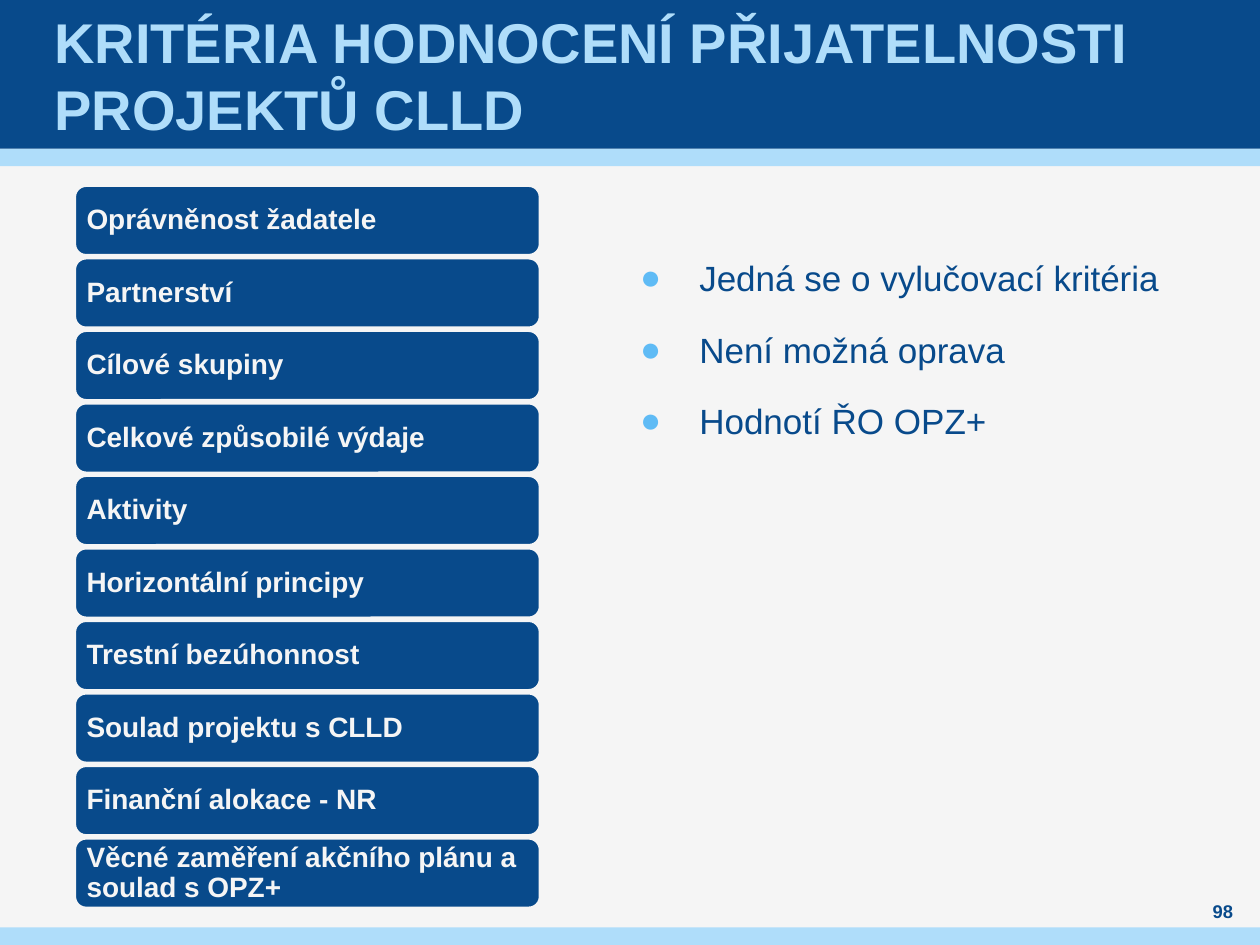
import dataclasses

import pptx
import pptx.dml.color
import pptx.enum.shapes
import pptx.enum.text
import pptx.oxml
import pptx.oxml.ns
import pptx.util

Inches = pptx.util.Inches
Pt = pptx.util.Pt
RGBColor = pptx.dml.color.RGBColor
MSO_SHAPE = pptx.enum.shapes.MSO_SHAPE
MSO_ANCHOR = pptx.enum.text.MSO_ANCHOR
PP_ALIGN = pptx.enum.text.PP_ALIGN

NAVY = RGBColor(0x08, 0x4A, 0x8B)
PALE_BLUE = RGBColor(0xAF, 0xDD, 0xFA)
BULLET_BLUE = RGBColor(0x5F, 0xBB, 0xF5)
OFF_WHITE = RGBColor(0xF5, 0xF5, 0xF5)
FONT = "Arial"


@dataclasses.dataclass(frozen=True)
class Box:
    left: float
    top: float
    width: float
    height: float

    def emu(self) -> tuple:
        return tuple(Inches(v) for v in dataclasses.astuple(self))


BANDS = [
    (Box(0, 1.18, 10, 0.14), PALE_BLUE),
    (Box(0, 0, 10, 1.18), NAVY),
    (Box(0, 7.36, 10, 0.14), PALE_BLUE),
]
CRITERIA = [
    "Oprávněnost žadatele",
    "Partnerství",
    "Cílové skupiny",
    "Celkové způsobilé výdaje",
    "Aktivity",
    "Horizontální principy",
    "Trestní bezúhonnost",
    "Soulad projektu s CLLD",
    "Finanční alokace - NR",
    "Věcné zaměření akčního plánu a soulad s OPZ+",
]
FIRST_TOP, LAST_TOP = 1.47, 6.65
NOTES = ["Jedná se o vylučovací kritéria", "Není možná oprava", "Hodnotí ŘO OPZ+"]


def write(sp, *lines: str, size: float, color: RGBColor, bold: bool = False,
          align=PP_ALIGN.LEFT, anchor=MSO_ANCHOR.MIDDLE, inset: tuple = (0, 0),
          line_spacing=None, space: float = 0) -> None:
    """Fill a shape with one paragraph per line; inset is (sides, top and bottom)."""
    tf = sp.text_frame
    tf.word_wrap = True
    tf.vertical_anchor = anchor
    tf.margin_left = tf.margin_right = Inches(inset[0])
    tf.margin_top = tf.margin_bottom = Inches(inset[1])
    for i, line in enumerate(lines):
        p = tf.add_paragraph() if i else tf.paragraphs[0]
        p.alignment = align
        p.line_spacing = line_spacing
        p.space_before = p.space_after = Pt(space)
        r = p.add_run()
        r.text = line
        r.font.name = FONT
        r.font.size = Pt(size)
        r.font.bold = bold
        r.font.color.rgb = color


def add_block(s, kind, box: Box, fill: RGBColor):
    sp = s.shapes.add_shape(kind, *box.emu())
    sp.shadow.inherit = False
    sp.fill.solid()
    sp.fill.fore_color.rgb = fill
    sp.line.fill.background()
    return sp


def add_bullet(p, char: str, color: RGBColor, indent: float) -> None:
    pPr = p._p.get_or_add_pPr()
    pPr.set("marL", str(Inches(indent)))
    pPr.set("indent", str(-Inches(indent)))
    ns = pptx.oxml.ns.nsdecls("a")
    for xml in (f'<a:buClr {ns}><a:srgbClr val="{color}"/></a:buClr>',
                f'<a:buFont {ns} typeface="{FONT}"/>',
                f'<a:buChar {ns} char="{char}"/>'):
        pPr.append(pptx.oxml.parse_xml(xml))


def main() -> None:
    prs = pptx.Presentation()
    prs.slide_width, prs.slide_height = Inches(10), Inches(7.5)
    s = prs.slides.add_slide(prs.slide_layouts[6])
    s.background.fill.solid()
    s.background.fill.fore_color.rgb = OFF_WHITE

    # Header and footer bands
    for box, fill in BANDS:
        add_block(s, MSO_SHAPE.RECTANGLE, box, fill)

    # Title
    title = s.shapes.add_textbox(*Box(0.39, 0, 9.21, 1.18).emu())
    write(title, "KRITÉRIA HODNOCENÍ PŘIJATELNOSTI PROJEKTŮ CLLD",
          size=32, color=PALE_BLUE, bold=True, inset=(0.04, 0))

    # Bulleted notes
    notes = s.shapes.add_textbox(*Box(5.08, 1.97, 4.33, 4.72).emu())
    write(notes, *NOTES, size=20, color=NAVY, anchor=MSO_ANCHOR.TOP,
          line_spacing=Pt(28.8), space=6)
    for p in notes.text_frame.paragraphs:
        add_bullet(p, "●", BULLET_BLUE, 0.47)

    # Page number
    number = s.shapes.add_textbox(*Box(9.45, 7.13, 0.51, 0.2).emu())
    write(number, "98", size=10.5, color=NAVY, bold=True, align=PP_ALIGN.CENTER)

    # Stack of criteria
    pitch = (LAST_TOP - FIRST_TOP) / (len(CRITERIA) - 1)
    for i, criterion in enumerate(CRITERIA):
        box = Box(0.59, FIRST_TOP + i * pitch, 3.7, 0.56)
        sp = add_block(s, MSO_SHAPE.ROUNDED_RECTANGLE, box, NAVY)
        sp.line.color.rgb = OFF_WHITE
        sp.line.width = Pt(2)
        write(sp, criterion, size=16, color=OFF_WHITE, bold=True,
              inset=(0.07, 0.07), line_spacing=0.9)

    prs.save("out.pptx")


if __name__ == "__main__":
    main()
